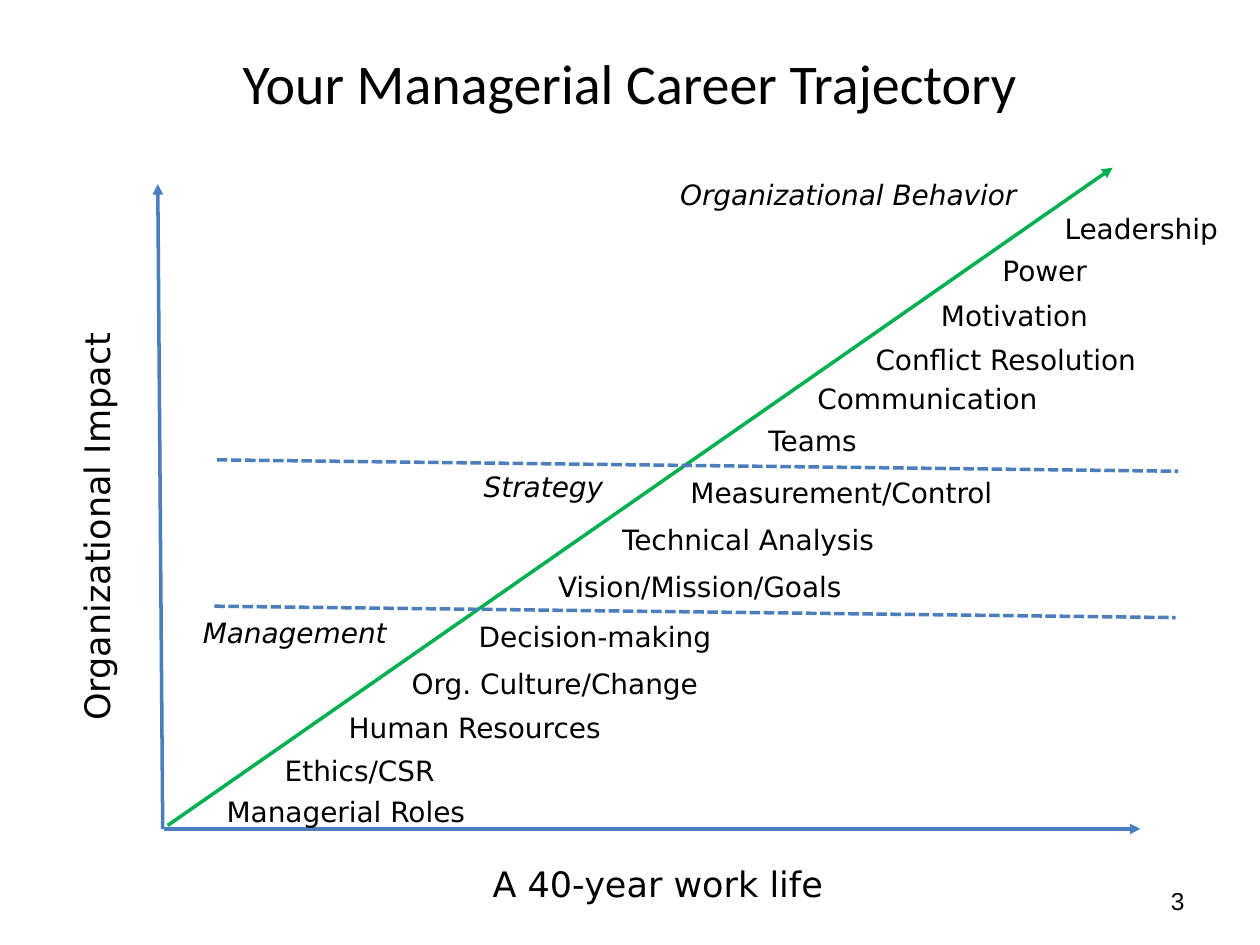
from dataclasses import dataclass

from lxml.etree import SubElement
from pptx import Presentation
from pptx.dml.color import RGBColor
from pptx.enum.dml import MSO_LINE
from pptx.enum.shapes import MSO_CONNECTOR
from pptx.enum.text import MSO_ANCHOR, PP_ALIGN
from pptx.oxml.ns import qn
from pptx.util import Cm, Pt

COLORS = {"text": "000000", "axis": "4B7EBC", "path": "00B050"}


@dataclass
class Label:
    text: str
    left: float
    top: float
    width: float = 6.99
    italic: bool = False


@dataclass
class Line:
    start: tuple[float, float]
    end: tuple[float, float]
    color: str = "axis"
    dashed: bool = False


TOPICS = [
    Label("Managerial Roles", 4.32, 15.9, 5.41),
    Label("Ethics/CSR", 5.49, 15.06, 5.82),
    Label("Human Resources", 6.78, 14.2, 5.82),
    Label("Org. Culture/Change", 8.05, 13.31, 7.8),
    Label("Decision-making", 9.4, 12.37),
    Label("Vision/Mission/Goals", 11, 11.35),
    Label("Technical Analysis", 12.29, 10.41),
    Label("Measurement/Control", 13.67, 9.47),
    Label("Teams", 15.24, 8.41),
    Label("Communication", 16.23, 7.57),
    Label("Conflict Resolution", 17.4, 6.78, 5.82),
    Label("Motivation", 18.72, 5.89),
    Label("Power", 19.96, 4.98, 5.44),
    Label("Leadership", 21.21, 4.14, 3.76),
]
STAGES = [
    Label("Management", 3.84, 12.29, 5.41, italic=True),
    Label("Strategy", 9.5, 9.35, 5.41, italic=True),
    Label("Organizational Behavior", 13.46, 3.45, 7.42, italic=True),
]
ARROWS = [
    Line((3.3, 16.71), (22.99, 16.71)),
    Line((3.28, 16.71), (3.18, 3.71)),
    Line((3.38, 16.64), (22.43, 3.38), color="path"),
]
BORDERS = [
    Line((4.32, 12.22), (23.7, 12.45), dashed=True),
    Line((4.37, 9.27), (23.75, 9.5), dashed=True),
]


def add_text(slide, text: str, left: float, top: float, width: float,
             height: float = 0.94, *, size: int = 16, font: str = "DejaVu Sans",
             italic: bool = False, align=PP_ALIGN.LEFT,
             anchor=MSO_ANCHOR.TOP, turn: int = 0) -> None:
    box = slide.shapes.add_textbox(Cm(left), Cm(top), Cm(width), Cm(height))
    box.rotation = turn
    frame = box.text_frame
    frame.word_wrap = True
    frame.vertical_anchor = anchor
    para = frame.paragraphs[0]
    para.alignment = align
    run = para.add_run()
    run.text = text
    run.font.name = font
    run.font.size = Pt(size)
    run.font.italic = italic
    run.font.color.rgb = RGBColor.from_string(COLORS["text"])


def add_line(slide, line: Line) -> None:
    """Draw a dashed border, or a solid line with an arrowhead at its end."""
    shape = slide.shapes.add_connector(
        MSO_CONNECTOR.STRAIGHT, *map(Cm, line.start + line.end))
    shape.line.color.rgb = RGBColor.from_string(COLORS[line.color])
    shape.line.width = Pt(2)
    if line.dashed:
        shape.line.dash_style = MSO_LINE.SQUARE_DOT
    else:
        SubElement(shape.line._get_or_add_ln(), qn("a:tailEnd"), type="triangle")
    SubElement(shape._element.spPr, qn("a:effectLst"))


def add_label(slide, label: Label) -> None:
    add_text(slide, label.text, label.left, label.top, label.width,
             italic=label.italic)


def main() -> None:
    deck = Presentation()
    deck.slide_width, deck.slide_height = Cm(25.4), Cm(19.05)
    slide = deck.slides.add_slide(deck.slide_layouts[6])

    add_text(slide, "Your Managerial Career Trajectory", 1.27, 0.76, 22.86, 1.78,
             size=32, font="Calibri", align=PP_ALIGN.CENTER,
             anchor=MSO_ANCHOR.MIDDLE)
    add_text(slide, "3", 18.21, 17.65, 5.92, 1.02, size=14, font="Arial",
             align=PP_ALIGN.RIGHT, anchor=MSO_ANCHOR.MIDDLE)
    for arrow in ARROWS:
        add_line(slide, arrow)
    for label in TOPICS + STAGES:
        add_label(slide, label)
    add_text(slide, "A 40-year work life", 9.68, 17.27, 7.32, 1.12, size=20)
    add_text(slide, "Organizational Impact", -2.29, 9.98, 8.48, 1.12, size=20,
             turn=270)
    for border in BORDERS:
        add_line(slide, border)

    deck.save("out.pptx")


if __name__ == "__main__":
    main()
